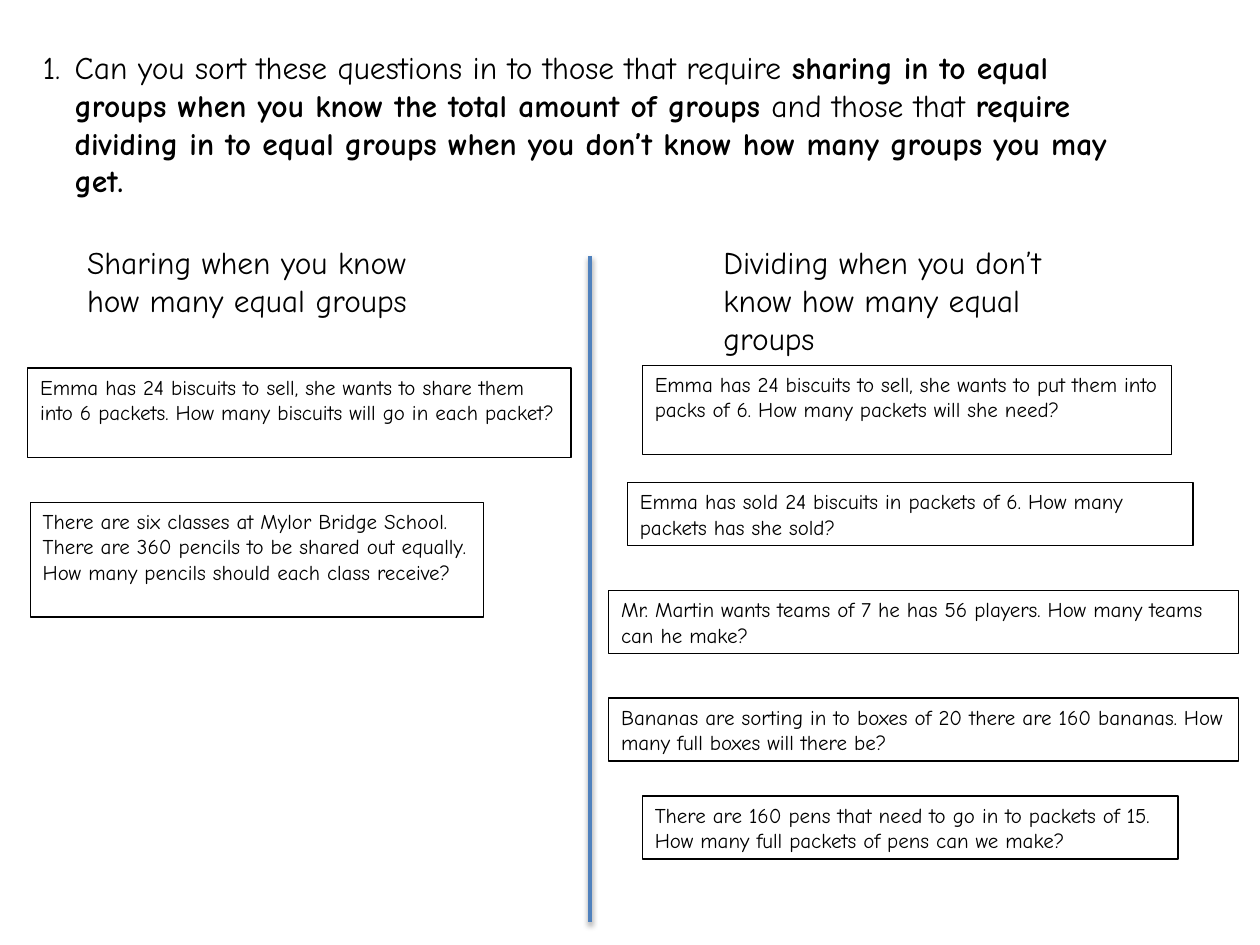
from lxml.etree import SubElement
from pptx import Presentation
from pptx.dml.color import RGBColor
from pptx.enum.shapes import MSO_CONNECTOR, MSO_SHAPE
from pptx.enum.text import MSO_ANCHOR, MSO_AUTO_SIZE, PP_ALIGN
from pptx.oxml.ns import qn
from pptx.util import Cm, Pt

FONT = "Comic Neue"
BLACK, BLUE = "000000", "4F81BD"

# Runs of the question: (text, bold)
QUESTION = [
    ("Can you sort these questions in to those that require ", False),
    ("sharing in to equal groups when you know the total amount of groups ", True),
    ("and those that ", False),
    ("require dividing in to equal groups when you don’t know how many groups you may get.", True),
]
QUESTION_BOX = (0.61, 0.84, 22.56, 3.33)

# Placeholder index: (text, box as left, top, width, height in cm)
HEADINGS = {
    1: ("Sharing when you know how many equal groups", (1.5, 4.78, 7.29, 1.8)),
    3: ("Dividing when you don’t know how many equal groups", (14.33, 4.78, 7.29, 2.57)),
}

CARDS = [
    ("Emma has 24 biscuits to sell, she wants to share them into 6 packets. "
     "How many biscuits will go in each packet?", (0.56, 7.42, 10.95, 1.8)),
    ("There are six classes at Mylor Bridge School. There are 360 pencils to be "
     "shared out equally. How many pencils should each class receive?", (0.61, 10.13, 9.14, 2.31)),
    ("Emma has 24 biscuits to sell, she wants to put them into packs of 6. "
     "How many packets will she need?", (12.95, 7.37, 10.67, 1.8)),
    ("Emma has sold 24 biscuits in packets of 6. How many packets has she sold?",
     (12.65, 9.73, 11.4, 1.27)),
    ("Mr. Martin wants teams of 7 he has 56 players. How many teams can he make?",
     (12.27, 11.91, 12.7, 1.27)),
    ("Bananas are sorting in to boxes of 20 there are 160 bananas. "
     "How many full boxes will there be?", (12.27, 14.07, 12.7, 1.27)),
    ("There are 160 pens that need to go in to packets of 15. "
     "How many full packets of pens can we make?", (12.95, 16.05, 10.8, 1.27)),
]

DIVIDER_X, DIVIDER_TOP, DIVIDER_BOTTOM = 11.89, 5.16, 18.59


def rgb(value):
    return RGBColor.from_string(value)


def place(sp, box):
    for name, value in zip(("left", "top", "width", "height"), box):
        setattr(sp, name, Cm(value))


def write(sp, runs, size):
    """Fill a shape with one left-aligned paragraph of (text, bold) runs."""
    tf = sp.text_frame
    frame = {"word_wrap": True, "auto_size": MSO_AUTO_SIZE.NONE,
             "vertical_anchor": MSO_ANCHOR.TOP}
    for name, value in frame.items():
        setattr(tf, name, value)
    p = tf.paragraphs[0]
    p.alignment, p.space_before = PP_ALIGN.LEFT, Pt(0)
    for text, bold in runs:
        r = p.add_run()
        r.text = text
        for name, value in {"name": FONT, "size": Pt(size), "bold": bold}.items():
            setattr(r.font, name, value)
        r.font.color.rgb = rgb(BLACK)
    return p


def number(p):
    pPr = p._p.get_or_add_pPr()
    pPr.set("marL", str(Cm(0.64)))
    pPr.set("indent", str(-Cm(0.64)))
    SubElement(pPr, qn("a:buFont"), typeface="+mj-lt")
    SubElement(pPr, qn("a:buAutoNum"), type="arabicPeriod")


def add_card(slide, text, box):
    sp = slide.shapes.add_shape(MSO_SHAPE.RECTANGLE, *map(Cm, box))
    sp.shadow.inherit = False
    sp.fill.background()
    sp.line.color.rgb = rgb(BLACK)
    sp.line.width = Pt(0.75)
    write(sp, [(text, False)], 12)


def add_divider(slide):
    line = slide.shapes.add_connector(
        MSO_CONNECTOR.STRAIGHT,
        *map(Cm, (DIVIDER_X, DIVIDER_TOP, DIVIDER_X, DIVIDER_BOTTOM)))
    line.line.color.rgb = rgb(BLUE)
    line.line.width = Pt(2)
    effects = SubElement(line._element.spPr, qn("a:effectLst"))
    shadow = SubElement(effects, qn("a:outerShdw"), blurRad=str(Pt(3.1)),
                        dist=str(Pt(1.6)), dir="5400000", rotWithShape="0")
    color = SubElement(shadow, qn("a:srgbClr"), val=BLACK)
    SubElement(color, qn("a:alpha"), val="38000")


def main():
    prs = Presentation()
    prs.slide_width, prs.slide_height = Cm(25.4), Cm(19.05)
    s = prs.slides.add_slide(prs.slide_layouts.get_by_name("Comparison"))

    place(s.shapes.title, QUESTION_BOX)
    number(write(s.shapes.title, QUESTION, 18))
    for sp in list(s.placeholders):
        idx = sp.placeholder_format.idx
        if idx in HEADINGS:
            text, box = HEADINGS[idx]
            place(sp, box)
            write(sp, [(text, False)], 18)
        elif idx:
            sp._element.getparent().remove(sp._element)

    add_divider(s)
    for text, box in CARDS:
        add_card(s, text, box)
    prs.save("out.pptx")


if __name__ == "__main__":
    main()
